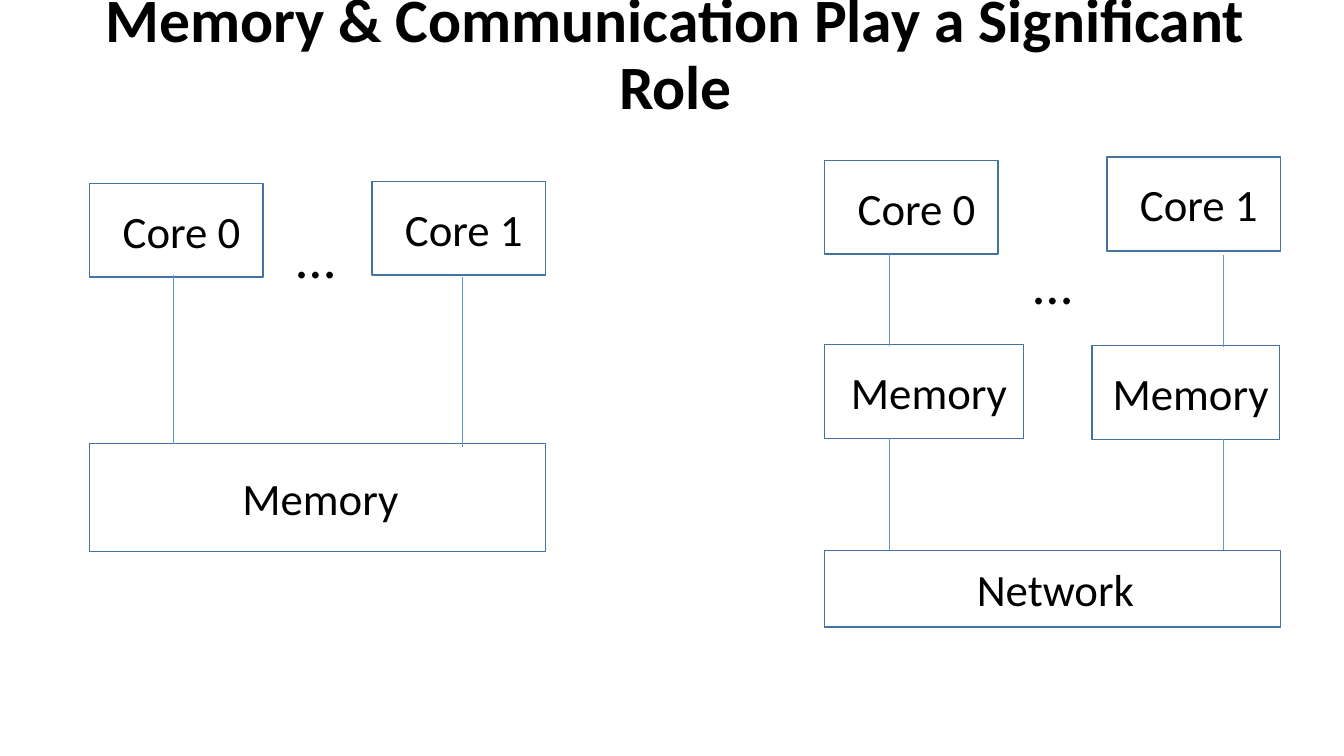
from lxml.etree import SubElement
from pptx import Presentation
from pptx.dml.color import RGBColor
from pptx.enum.shapes import MSO_CONNECTOR, MSO_SHAPE
from pptx.enum.text import MSO_ANCHOR, MSO_AUTO_SIZE, PP_ALIGN
from pptx.oxml.ns import qn
from pptx.util import Inches, Pt

COLOURS = {"text": "000000", "paper": "FFFFFF", "outline": "43739E", "wire": "5B9BD5"}
FONT = "Calibri"
CELL = Inches(0.1)
CORE_WIDTH, UNIT_HEIGHT, CORE_STEP, SYSTEM_WIDTH = 17.2, 9.3, 28, 45.2


def colour(name):
    """Return the named colour of the palette."""
    return RGBColor.from_string(COLOURS[name])


def cells(*counts):
    """Turn counts of grid cells into lengths."""
    return [round(count * CELL) for count in counts]


def add_run(paragraph, text, size, ink="text", bold=False):
    """Add one formatted run to a paragraph."""
    run = paragraph.add_run()
    run.text = text
    run.font.name = FONT
    run.font.size = Pt(size)
    run.font.bold = bold
    run.font.color.rgb = colour(ink)


def add_title(slide, text):
    """Place and fill the title placeholder."""
    title = slide.shapes.title
    title.left, title.top, title.width, title.height = cells(3.5, 0.8, 127, 9.5)
    frame = title.text_frame
    frame.auto_size = MSO_AUTO_SIZE.NONE
    frame.word_wrap = True
    frame.vertical_anchor = MSO_ANCHOR.MIDDLE
    heading = frame.paragraphs[0]
    heading.alignment = PP_ALIGN.CENTER
    heading.line_spacing = 0.9
    add_run(heading, text, 44, bold=True)


def add_unit(slide, left, top, width, height, *runs):
    """Draw an outlined hardware unit with a centred label."""
    unit = slide.shapes.add_shape(MSO_SHAPE.RECTANGLE, *cells(left, top, width, height))
    unit.shadow.inherit = False
    unit.fill.background()
    unit.line.color.rgb = colour("outline")
    unit.line.width = Pt(1)
    unit.text_frame.word_wrap = True
    unit.text_frame.vertical_anchor = MSO_ANCHOR.MIDDLE
    label = unit.text_frame.paragraphs[0]
    label.alignment = PP_ALIGN.CENTER
    for run in runs:
        add_run(label, *run)


def add_shared_unit(slide, left, top, height, name):
    """Draw the wide unit that all cores of a system share."""
    add_unit(slide, left, top, SYSTEM_WIDTH, height, (" ", 18, "paper"), (name, 32))


def add_cores(slide, left, tops):
    """Draw a row of numbered cores."""
    for number, top in enumerate(tops):
        add_unit(slide, left + number * CORE_STEP, top, CORE_WIDTH, UNIT_HEIGHT,
                 (f" Core {number}", 32))


def add_ellipsis(slide, left, top):
    """Write the dots that stand for further cores."""
    dots = slide.shapes.add_textbox(*cells(left, top, 10.8, 7.7))
    dots.text_frame.word_wrap = True
    add_run(dots.text_frame.paragraphs[0], "…", 40)


def add_wire(slide, across, top, bottom):
    """Draw a thin vertical wire between two units."""
    wire = slide.shapes.add_connector(
        MSO_CONNECTOR.STRAIGHT, *cells(across, top, across, bottom))
    wire.line.color.rgb = colour("wire")
    wire.line.width = Pt(0.5)
    SubElement(wire._element.spPr, qn("a:effectLst"))


def add_shared_memory_system(slide, left):
    """Draw cores wired to one common memory."""
    add_cores(slide, left, (18.2, 18))
    add_ellipsis(slide, left + 19.5, 21.6)
    add_shared_unit(slide, left, 44, 10.7, "Memory")
    add_wire(slide, left + 8.3, 27.3, 44)
    add_wire(slide, left + 37, 27.5, 44.3)


def add_networked_system(slide, left):
    """Draw cores with memories of their own, joined by a network."""
    network_top = 54.6
    add_cores(slide, left, (15.9, 15.6))
    add_ellipsis(slide, left + 19.7, 24.2)
    add_shared_unit(slide, left, network_top, 7.6, "Network")
    for offset, width, memory_top, wire_offset in (
            (0, 19.7, 34.2, 6.4), (26.5, 18.6, 34.3, 39.5)):
        add_unit(slide, left + offset, memory_top, width, UNIT_HEIGHT, (" Memory", 32))
        add_wire(slide, left + wire_offset, memory_top - 9, memory_top + 0.1)
        add_wire(slide, left + wire_offset, memory_top + UNIT_HEIGHT, network_top)


def main():
    """Build and save the slide."""
    deck = Presentation()
    deck.slide_width, deck.slide_height = Inches(13.33), Inches(7.5)
    slide = deck.slides.add_slide(deck.slide_layouts[5])
    slide.background.fill.solid()
    slide.background.fill.fore_color.rgb = colour("paper")
    add_title(slide, "Memory & Communication Play a Significant Role")
    add_shared_memory_system(slide, 8.9)
    add_networked_system(slide, 81.8)
    deck.save("out.pptx")


if __name__ == "__main__":
    main()
